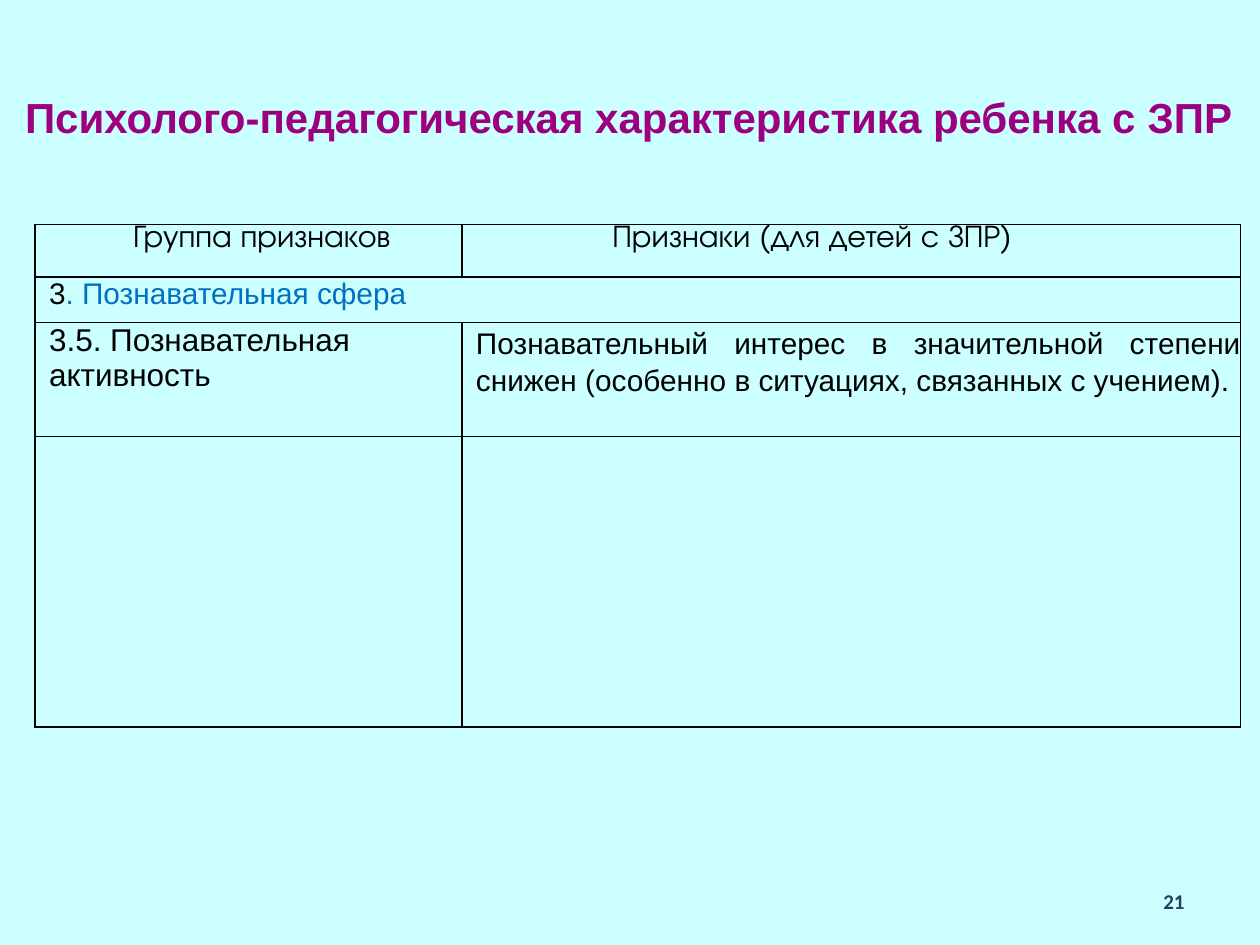
"""Build a slide with a table of traits of the cognitive sphere."""
from lxml.etree import SubElement
from pptx import Presentation
from pptx.dml.color import RGBColor
from pptx.enum.text import MSO_ANCHOR, PP_ALIGN
from pptx.oxml.ns import qn
from pptx.util import Pt

COLORS = {
    "background": "CCFFFF",
    "title": "9C007F",
    "number": "254061",
    "text": "000000",
    "accent": "0070C0",
    "border": "000000",
}


def add_text(paragraph, text, size=18, font="Arial", color="text", bold=False):
    run = paragraph.add_run()
    run.text = text
    run.font.size = Pt(size)
    run.font.name = font
    run.font.bold = bold
    run.font.color.rgb = RGBColor.from_string(COLORS[color])
    return run


presentation = Presentation()
presentation.slide_width = Pt(720)
presentation.slide_height = Pt(540)
slide = presentation.slides.add_slide(presentation.slide_layouts[6])
slide.background.fill.solid()
slide.background.fill.fore_color.rgb = RGBColor.from_string(COLORS["background"])

number_box = slide.shapes.add_textbox(Pt(516), Pt(500.4), Pt(168), Pt(28.8))
number_box.text_frame.word_wrap = True
number_box.text_frame.vertical_anchor = MSO_ANCHOR.MIDDLE
number = number_box.text_frame.paragraphs[0]
number.alignment = PP_ALIGN.RIGHT
add_text(number, "21", size=12, font="Calibri", color="number", bold=True)

title_box = slide.shapes.add_textbox(Pt(7.2), Pt(49), Pt(833.8), Pt(36))
title_box.text_frame.word_wrap = True
title = title_box.text_frame.paragraphs[0]
title.alignment = PP_ALIGN.JUSTIFY
title_format = {"size": 24, "color": "title", "bold": True}
add_text(title, "Психолого-педагогическая характеристика ребенка с ", **title_format)
abbreviation = add_text(title, "ЗПР", **title_format)
abbreviation.font._element.set("cap", "small")

column_widths = [244, 445]
row_heights = [30.2, 26, 65, 166]
table_shape = slide.shapes.add_table(
    len(row_heights), len(column_widths),
    Pt(20), Pt(128.2), Pt(sum(column_widths)), Pt(sum(row_heights)),
)
table = table_shape.table
table.first_row = False
table.horz_banding = False
for column, width in zip(table.columns, column_widths):
    column.width = Pt(width)
for row, height in zip(table.rows, row_heights):
    row.height = Pt(height)

for cell in table.iter_cells():
    cell.margin_left = cell.margin_right = cell.margin_top = cell.margin_bottom = 0
    properties = cell._tc.get_or_add_tcPr()
    for side in ("a:lnL", "a:lnR", "a:lnT", "a:lnB"):
        line = SubElement(properties, qn(side), w=str(Pt(1)))
        line_fill = SubElement(line, qn("a:solidFill"))
        SubElement(line_fill, qn("a:srgbClr"), val=COLORS["border"])
    cell.fill.background()
table.cell(1, 0).merge(table.cell(1, 1))

header_format = {"font": "TeX Gyre Adventor"}
contents = [
    (0, 0, 56, [("Группа признаков", header_format)]),
    (0, 1, 86, [("Признаки (для детей с ЗПР)", header_format)]),
    (1, 0, 8, [("3", {"size": 17}),
               (". Познавательная сфера", {"size": 17, "color": "accent"})]),
    (2, 0, 8, [("3.5. Познавательная активность", {})]),
    (2, 1, 8, [("Познавательный интерес в значительной степени снижен "
                "(особенно в ситуациях, связанных с учением).", {"size": 17})]),
]
for row_index, column_index, indent, runs in contents:
    paragraph = table.cell(row_index, column_index).text_frame.paragraphs[0]
    paragraph._p.get_or_add_pPr().set("marL", str(Pt(indent)))
    for text, text_format in runs:
        add_text(paragraph, text, **text_format)

description = table.cell(2, 1).text_frame.paragraphs[0]
description.alignment = PP_ALIGN.JUSTIFY
description.line_spacing = Pt(21.6)

presentation.save("out.pptx")
